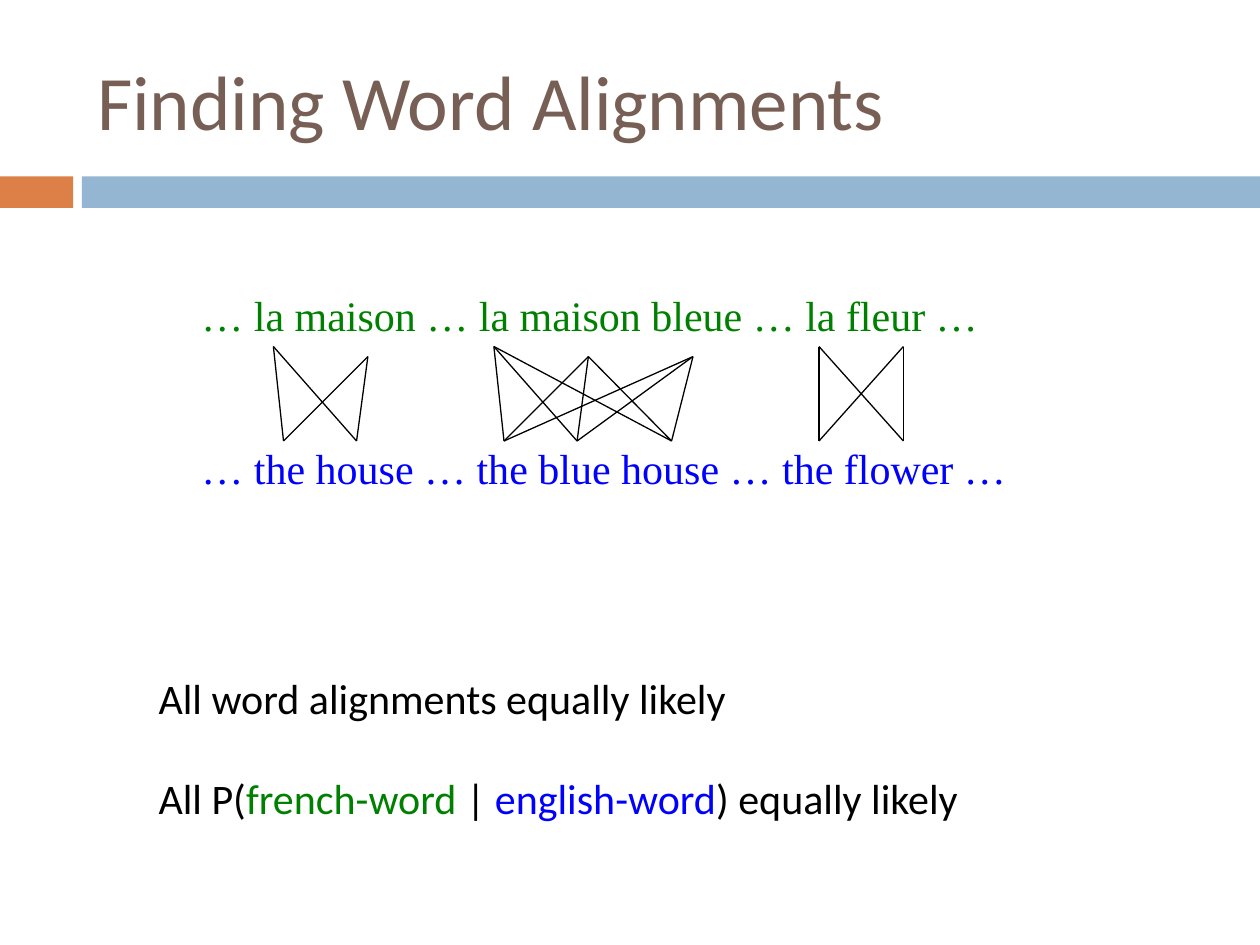
from itertools import product

from pptx import Presentation
from pptx.dml.color import RGBColor
from pptx.enum.shapes import MSO_CONNECTOR as CONNECTOR, MSO_SHAPE as SHAPE
from pptx.enum.text import MSO_ANCHOR as ANCHOR, PP_ALIGN as ALIGN
from pptx.oxml.ns import qn
from pptx.util import Inches, Pt

COLORS = {
    "title": "775F55",
    "accent": "DD8047",
    "band": "94B6D2",
    "text": "000000",
    "french": "008000",
    "english": "0000FF",
}


class SlideBuilder:
    def __init__(self, slide):
        self.slide = slide

    def color(self, name):
        return RGBColor.from_string(COLORS[name])

    def title(self, text, left, top, width, height):
        title = self.slide.shapes.title
        title.left, title.top = Inches(left), Inches(top)
        title.width, title.height = Inches(width), Inches(height)
        title.text_frame.text = text
        title.text_frame.vertical_anchor = ANCHOR.MIDDLE
        paragraph = title.text_frame.paragraphs[0]
        paragraph.alignment = ALIGN.LEFT
        paragraph.font.size = Pt(44)
        paragraph.font.name = "Calibri"
        paragraph.font.color.rgb = self.color("title")

    def bar(self, left, top, width, height, fill):
        bar = self.slide.shapes.add_shape(
            SHAPE.RECTANGLE, Inches(left), Inches(top), Inches(width), Inches(height))
        bar.shadow.inherit = False
        bar.fill.solid()
        bar.fill.fore_color.rgb = self.color(fill)
        bar.line.fill.background()

    def line(self, start, end):
        line = self.slide.shapes.add_connector(
            CONNECTOR.STRAIGHT, *(Inches(value) for value in (*start, *end)))
        line.line.color.rgb = self.color("text")
        line.line.width = Pt(0.75)
        properties = line._element.spPr
        properties.append(properties.makeelement(qn("a:effectLst"), {}))

    def text(self, left, top, width, height, paragraphs, font, gap):
        """Each paragraph is a list of (text, colour name) runs."""
        box = self.slide.shapes.add_textbox(
            Inches(left), Inches(top), Inches(width), Inches(height))
        frame = box.text_frame
        frame.word_wrap = True
        for index, runs in enumerate(paragraphs):
            paragraph = frame.add_paragraph() if index else frame.paragraphs[0]
            paragraph.font.size = Pt(24)
            paragraph.font.name = font
            paragraph.space_before = Pt(gap if index else 0)
            for words, color in runs:
                run = paragraph.add_run()
                run.text = words
                run.font.color.rgb = self.color(color)


def main():
    prs = Presentation()
    prs.slide_width, prs.slide_height = Inches(10), Inches(7.5)
    builder = SlideBuilder(prs.slides.add_slide(prs.slide_layouts[5]))

    # Title and divider band
    builder.bar(0, 1.4, 0.58, 0.25, "accent")
    builder.bar(0.65, 1.4, 9.35, 0.25, "band")
    builder.title("Finding Word Alignments", 0.67, 0.25, 8.92, 1.08)

    # Every French word is linked to every English word of its phrase
    english_y = 3.5
    phrases = [
        ([(2.17, 2.75), (2.92, 2.83)], [2.25, 2.83]),
        ([(3.92, 2.75), (4.67, 2.83), (5.5, 2.83)], [4, 4.58, 5.33]),
        ([(6.5, 2.75), (7.17, 2.75)], [6.5, 7.17]),
    ]
    for french_points, english_xs in phrases:
        for french_point, english_x in product(french_points, english_xs):
            builder.line(french_point, (english_x, english_y))

    # Conclusions
    builder.text(1.16, 5.29, 7.75, 1.31, [
        [("All word alignments equally likely", "text")],
        [("All P(", "text"), ("french-word", "french"), (" | ", "text"),
         ("english-word", "english"), (") equally likely", "text")],
    ], "Calibri", gap=28)

    # Parallel sentences
    builder.text(1.5, 2.25, 6.65, 1.72, [
        [("… la maison … la maison bleue … la fleur …", "french")],
        [("… the house … the blue house … the flower …", "english")],
    ], "Times New Roman", gap=58.6)

    prs.save("out.pptx")


if __name__ == "__main__":
    main()
